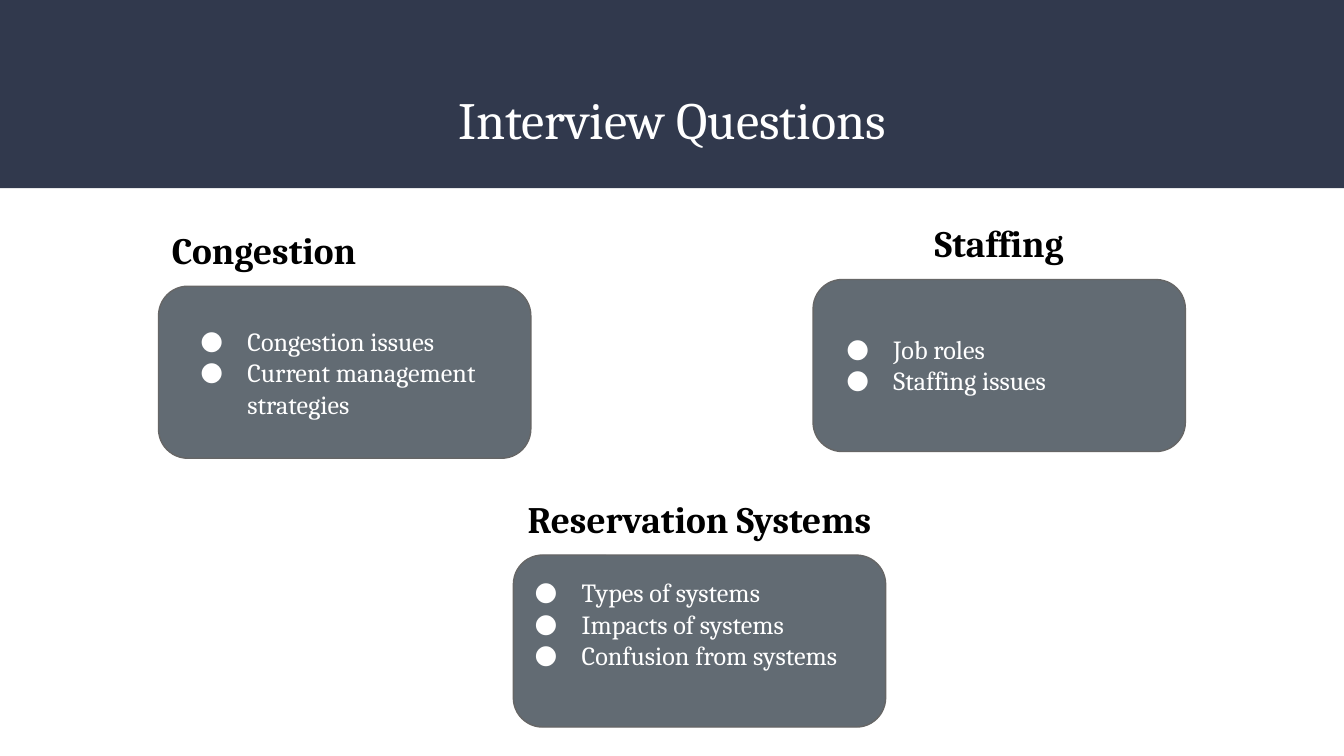
from pptx import Presentation
from pptx import util as u
from pptx.dml.color import RGBColor
from pptx.enum import shapes, text
from pptx.oxml import parse_xml
from pptx.oxml.ns import nsdecls

COLS = 100
ROWS = COLS * 9 / 16
CELL = u.Inches(0.1)
FONT = "Cambria"
NAVY, SLATE, EDGE = "31394D", "626B73", "666666"
WHITE, BLACK = "FFFFFF", "000000"
LEFT, CENTER = text.PP_ALIGN.LEFT, text.PP_ALIGN.CENTER
CARD_W, CARD_H, HEAD_H = 27.7, 12.8, 5.4


def rgb(value):
    return RGBColor.from_string(value)


def grid(*cells):
    return [round(c * CELL) for c in cells]


def add_panel(s, kind, box, fill, line=None):
    sp = s.shapes.add_shape(kind, *grid(*box))
    sp.shadow.inherit = False
    sp.fill.solid()
    sp.fill.fore_color.rgb = rgb(fill)
    if line:
        sp.line.color.rgb = rgb(line)
        sp.line.width = u.Pt(0.75)
    else:
        sp.line.fill.background()
    return sp


def add_bullet(p):
    pPr = p._p.get_or_add_pPr()
    pPr.set("marL", str(u.Inches(0.5)))
    pPr.set("indent", str(u.Inches(-0.35)))
    ns = nsdecls("a")
    for xml in (f'<a:buClr {ns}><a:srgbClr val="{WHITE}"/></a:buClr>',
                f'<a:buFont {ns} typeface="{FONT}"/>',
                f'<a:buChar {ns} char="●"/>'):
        pPr.append(parse_xml(xml))


def write(sp, lines, size, color, align=LEFT, bold=False, bullets=False,
          anchor=text.MSO_ANCHOR.TOP):
    tf = sp.text_frame
    tf.word_wrap = True
    tf.auto_size = text.MSO_AUTO_SIZE.NONE
    tf.vertical_anchor = anchor
    tf.margin_left = tf.margin_right = tf.margin_top = tf.margin_bottom = CELL
    for i, line in enumerate(lines):
        p = tf.add_paragraph() if i else tf.paragraphs[0]
        p.alignment = align
        if bullets:
            add_bullet(p)
        r = p.add_run()
        r.text = line
        r.font.name, r.font.size, r.font.bold = FONT, u.Pt(size), bold
        r.font.color.rgb = rgb(color)


def add_header(s, box, title):
    x, y, w, h = box
    add_panel(s, shapes.MSO_SHAPE.RECTANGLE, box, NAVY)
    sp = s.shapes.title
    s.shapes._spTree.append(sp._element)
    sp.left, sp.top, sp.width, sp.height = grid(x + 3.4, y + 5.5, w - 6.8, 6.8)
    write(sp, [title], 28, WHITE, CENTER)


def add_topic(s, box, heading, items, align=CENTER, head_pad=0, list_box=None):
    x, y, w, h = box
    card = add_panel(s, shapes.MSO_SHAPE.ROUNDED_RECTANGLE, box, SLATE, EDGE)
    card.adjustments[0] = 0.17
    head = s.shapes.add_textbox(
        *grid(x - head_pad, y - HEAD_H, w + 2 * head_pad, HEAD_H))
    write(head, [heading], 20, BLACK, align, bold=True)
    if list_box:
        pad, drop, height = list_box
        body = s.shapes.add_textbox(*grid(x - pad, y + drop, w + 2 * pad, height))
        write(body, items, 14, WHITE, bullets=True)
    else:
        write(card, items, 14, WHITE, bullets=True, anchor=text.MSO_ANCHOR.MIDDLE)


def main():
    prs = Presentation()
    prs.slide_width, prs.slide_height = grid(COLS, ROWS)
    s = prs.slides.add_slide(prs.slide_layouts[5])
    add_header(s, (0, 0, COLS, 14), "Interview Questions")
    add_topic(s, (11.8, 21.3, CARD_W, CARD_H), "Congestion",
              ["Congestion issues", "Current management strategies"], align=LEFT)
    add_topic(s, (60.5, 20.8, CARD_W, CARD_H), "Staffing",
              ["Job roles", "Staffing issues"], list_box=(0, 3, 6.7))
    add_topic(s, (38.2, 41.3, CARD_W, CARD_H), "Reservation Systems",
              ["Types of systems", "Impacts of systems", "Confusion from systems"],
              head_pad=3.1, list_box=(0.9, 0.6, 9.1))
    prs.save("out.pptx")


if __name__ == "__main__":
    main()
